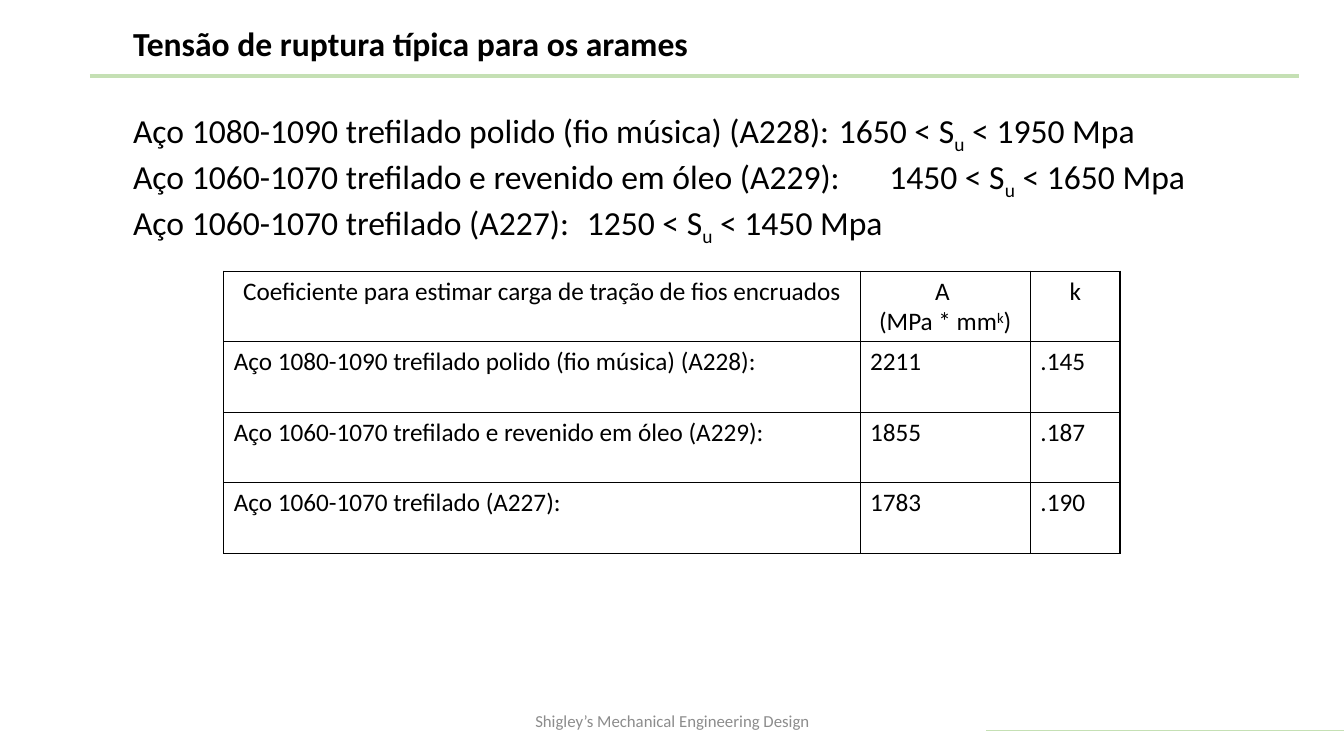
from collections import namedtuple

from lxml.etree import SubElement
from pptx import Presentation
from pptx.dml.color import RGBColor
from pptx.enum.shapes import MSO_CONNECTOR as Connector
from pptx.enum.text import MSO_ANCHOR as Anchor, MSO_AUTO_SIZE as AutoSize, PP_ALIGN as Align
from pptx.oxml.ns import qn
from pptx.util import Inches, Pt

BLACK = RGBColor(0x00, 0x00, 0x00)
WHITE = RGBColor(0xFF, 0xFF, 0xFF)
GREEN = RGBColor(0xC5, 0xE0, 0xB4)
GRAY = RGBColor(0x8C, 0x8C, 0x8C)
FONT = "Calibri"
SLIDE_WIDTH, SLIDE_HEIGHT = Inches(13.33), Inches(7.5)
SUBSCRIPT, SUPERSCRIPT = -25, 30

Box = namedtuple("Box", "left top width height")

STEELS = [
    ("Aço 1080-1090 trefilado polido (fio música) (A228):", 1650, 1950, "2211", ".145"),
    ("Aço 1060-1070 trefilado e revenido em óleo (A229):", 1450, 1650, "1855", ".187"),
    ("Aço 1060-1070 trefilado (A227):", 1250, 1450, "1783", ".190"),
]
COLUMN_SHARES = [0.71, 0.19, 0.1]


def share_box(left, top, width, height):
    """Return a box whose sides are percentages of the slide."""
    return Box(int(SLIDE_WIDTH * left / 100), int(SLIDE_HEIGHT * top / 100),
               int(SLIDE_WIDTH * width / 100), int(SLIDE_HEIGHT * height / 100))


def place(shape, box):
    """Move and size a shape to fill a box."""
    shape.left, shape.top, shape.width, shape.height = box


def format_runs(paragraph, size, color=BLACK, bold=False):
    """Give all runs of a paragraph one font."""
    for run in paragraph.runs:
        run.font.name, run.font.size, run.font.bold = FONT, Pt(size), bold
        run.font.color.rgb = color


def add_shifted_text(paragraph, before, shifted, after, baseline):
    """Write text with a raised or lowered part in the middle."""
    paragraph.text = before
    run = paragraph.add_run()
    run.text = shifted
    run.font._element.set("baseline", str(baseline * 1000))
    paragraph.add_run().text = after


def add_rule(slide, box, weight):
    """Draw a green rule along the top of a box."""
    line = slide.shapes.add_connector(Connector.STRAIGHT, box.left, box.top,
                                      box.left + box.width, box.top)
    line.line.color.rgb = GREEN
    line.line.width = Pt(weight)
    SubElement(line._element.spPr, qn("a:effectLst"))


def add_title(slide, box, text):
    """Fill the title placeholder."""
    title = slide.shapes.title
    place(title, box)
    frame = title.text_frame
    frame.text = text
    frame.auto_size = AutoSize.NONE
    frame.vertical_anchor = Anchor.MIDDLE
    paragraph = frame.paragraphs[0]
    paragraph.alignment = Align.LEFT
    paragraph.line_spacing = 0.9
    format_runs(paragraph, 24, bold=True)


def add_footer(slide, box, text):
    """Write the centred footer."""
    frame = slide.shapes.add_textbox(*box).text_frame
    frame.word_wrap = True
    frame.vertical_anchor = Anchor.MIDDLE
    frame.text = text
    frame.paragraphs[0].alignment = Align.CENTER
    format_runs(frame.paragraphs[0], 12, GRAY)


def add_strength_list(slide, box):
    """List the strength range of each steel, aligned on one tab stop."""
    body = slide.placeholders[1]
    place(body, box)
    body.fill.solid()
    body.fill.fore_color.rgb = WHITE
    frame = body.text_frame
    frame.word_wrap = False
    frame.auto_size = AutoSize.NONE
    for index, (steel, low, high, *_) in enumerate(STEELS):
        paragraph = frame.add_paragraph() if index else frame.paragraphs[0]
        properties = paragraph._p.get_or_add_pPr()
        properties.set("marL", "0")
        properties.set("indent", "0")
        SubElement(properties, qn("a:buNone"))
        tabs = SubElement(properties, qn("a:tabLst"))
        SubElement(tabs, qn("a:tab"), pos=str(int(SLIDE_WIDTH * 0.6)), algn="l")
        paragraph.space_before = Pt(0)
        add_shifted_text(paragraph, f"{steel}\t{low} < S", "u", f" < {high} Mpa", SUBSCRIPT)
        format_runs(paragraph, 24)


def format_cell(cell, alignment):
    """Give a cell black borders, no fill and its text format."""
    properties = cell._tc.get_or_add_tcPr()
    for side in ("lnL", "lnR", "lnT", "lnB"):
        border = SubElement(properties, qn(f"a:{side}"), w=str(Pt(1)))
        fill = SubElement(border, qn("a:solidFill"))
        SubElement(fill, qn("a:srgbClr"), val=str(BLACK))
    cell.fill.background()
    for paragraph in cell.text_frame.paragraphs:
        paragraph.alignment = alignment
        format_runs(paragraph, 18)


def add_coefficient_table(slide, box):
    """Tabulate the coefficients A and k of each steel."""
    rows = [("Coeficiente para estimar carga de tração de fios encruados", "", "k")]
    rows += [(steel, a, k) for steel, _, _, a, k in STEELS]
    table = slide.shapes.add_table(len(rows), len(COLUMN_SHARES), *box).table
    table.first_row = table.horz_banding = False
    for column, share in zip(table.columns, COLUMN_SHARES):
        column.width = int(box.width * share)
    for row_index, row in enumerate(rows):
        for column_index, text in enumerate(row):
            table.cell(row_index, column_index).text = text
    add_shifted_text(table.cell(0, 1).text_frame.paragraphs[0],
                     "A \v(MPa * mm", "k", ")", SUPERSCRIPT)
    for row_index in range(len(rows)):
        for column_index in range(len(COLUMN_SHARES)):
            format_cell(table.cell(row_index, column_index),
                        Align.LEFT if row_index else Align.CENTER)


def main():
    """Build and save the slide."""
    presentation = Presentation()
    presentation.slide_width, presentation.slide_height = SLIDE_WIDTH, SLIDE_HEIGHT
    slide = presentation.slides.add_slide(presentation.slide_layouts[1])
    add_rule(slide, share_box(6.68, 10, 90, 0), 2.75)
    add_rule(slide, share_box(73.37, 96.67, 26.63, 0), 1)
    add_title(slide, share_box(9.15, 2.67, 82, 6.67), "Tensão de ruptura típica para os arames")
    add_footer(slide, share_box(33.16, 92.67, 33.76, 5.33),
               "Shigley’s Mechanical Engineering Design")
    add_strength_list(slide, share_box(9.15, 13.87, 84.4, 17.47))
    add_coefficient_table(slide, share_box(16.65, 35.87, 66.69, 37.33))
    presentation.save("out.pptx")


if __name__ == "__main__":
    main()
